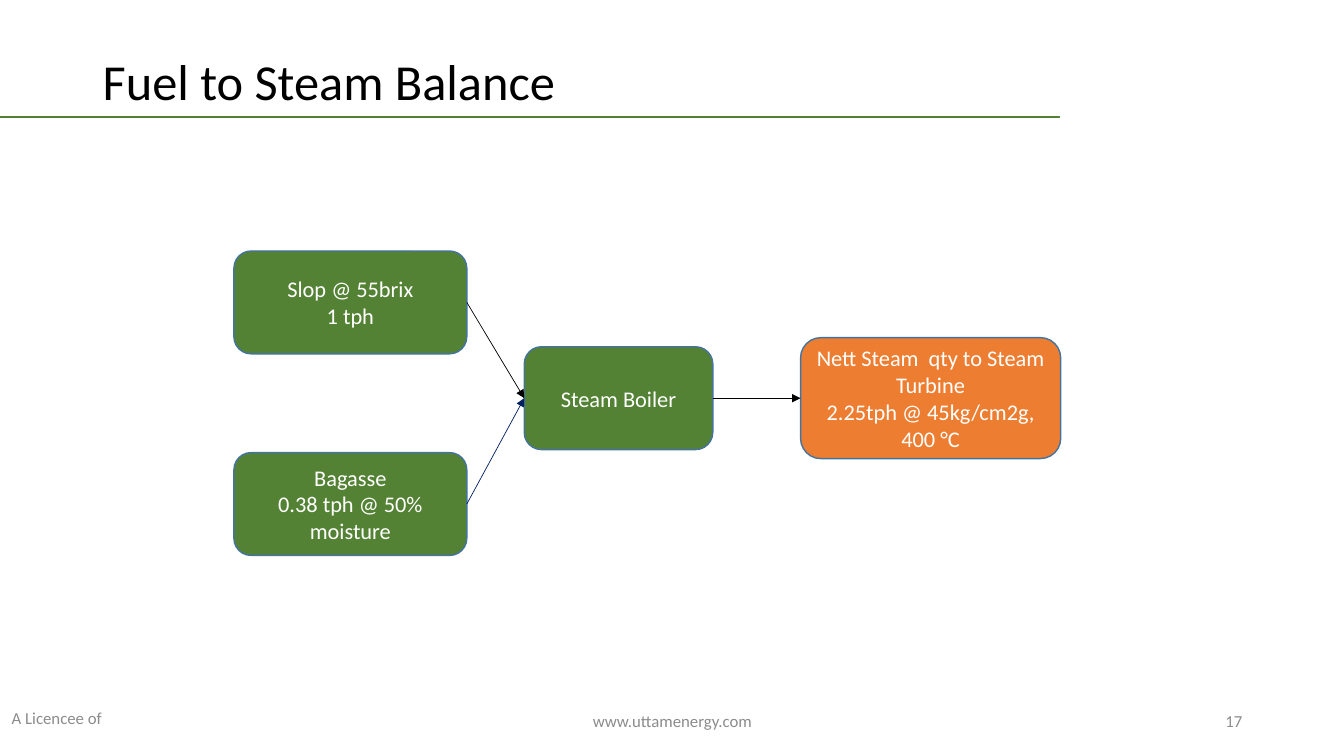
from lxml import etree
from pptx import Presentation
from pptx.dml.color import RGBColor
from pptx.enum import shapes, text
from pptx.oxml import ns
from pptx.util import Inches, Pt

COLORS = {
    "green": "548235",
    "orange": "ED7D31",
    "outline": "43739E",
    "rule": "70AD47",
    "rule_edge": "538035",
    "black": "000000",
    "navy": "002060",
    "white": "FFFFFF",
    "grey": "8C8C8C",
}
FONT = "Calibri"
LEFT_SITE, RIGHT_SITE = 1, 3


def color(name):
    return RGBColor.from_string(COLORS[name])


def write(shape, lines, size, color_name, align):
    """Fill a shape with one paragraph per line, centred vertically."""
    frame = shape.text_frame
    frame.word_wrap = True
    frame.vertical_anchor = text.MSO_ANCHOR.MIDDLE
    frame.text = "\n".join(lines)
    for paragraph in frame.paragraphs:
        paragraph.alignment = align
        for run in paragraph.runs:
            run.font.name = FONT
            run.font.size = Pt(size)
            run.font.color.rgb = color(color_name)


def add_box(slide, kind, box, fill, line, width):
    shape = slide.shapes.add_shape(kind, *map(Inches, box))
    shape.shadow.inherit = False
    shape.fill.solid()
    shape.fill.fore_color.rgb = color(fill)
    shape.line.color.rgb = color(line)
    shape.line.width = Pt(width)
    return shape


def add_label(slide, box, words, size, color_name, align):
    label = slide.shapes.add_textbox(*map(Inches, box))
    write(label, [words], size, color_name, align)
    return label


def add_step(slide, box, lines, fill="green"):
    step = add_box(slide, shapes.MSO_SHAPE.ROUNDED_RECTANGLE, box, fill, "outline", 1)
    write(step, lines, 16, "white", text.PP_ALIGN.CENTER)
    return step


def add_arrow(slide, source, target, color_name="black"):
    """Join the right side of one step to the left side of the next."""
    arrow = slide.shapes.add_connector(shapes.MSO_CONNECTOR.STRAIGHT, 0, 0, 0, 0)
    arrow.begin_connect(source, RIGHT_SITE)
    arrow.end_connect(target, LEFT_SITE)
    arrow.line.color.rgb = color(color_name)
    arrow.line.width = Pt(0.5)
    etree.SubElement(arrow.line._get_or_add_ln(), ns.qn("a:tailEnd"), type="triangle")
    etree.SubElement(arrow._element.spPr, ns.qn("a:effectLst"))


def add_header(slide, left, top, width, height):
    add_box(slide, shapes.MSO_SHAPE.RECTANGLE, (-0.03, top + 0.76, 10.54, 0.01),
            "rule", "rule_edge", 0.75)
    title = add_label(slide, (left, top, width, height), "Fuel to Steam Balance",
                      36, "black", text.PP_ALIGN.LEFT)
    title.text_frame.paragraphs[0].line_spacing = 0.9


def add_flow(slide, left, top):
    """Two fuels feed the boiler, which feeds the turbine."""
    fuel_width, height, fuel_pitch = 2.31, 1.02, 2
    slop, bagasse = (
        add_step(slide, (left, top + row * fuel_pitch, fuel_width, height), lines)
        for row, lines in enumerate([
            ["Slop @ 55brix", "1 tph"],
            ["Bagasse", "0.38 tph @ 50% moisture"],
        ])
    )
    boiler = add_step(slide, (left + 2.88, top + 0.95, 1.87, height), ["Steam Boiler"])
    turbine = add_step(slide, (left + 5.62, top + 0.86, 2.58, 1.2),
                       ["Nett Steam  qty to Steam Turbine", "2.25tph @ 45kg/cm2g, 400 °C"],
                       "orange")
    add_arrow(slide, slop, boiler)
    add_arrow(slide, boiler, turbine)
    add_arrow(slide, bagasse, boiler, "navy")


def add_footer(slide, top, height):
    align = text.PP_ALIGN
    for box, words, side in [
        ((0, top - 0.01, 1.11, 0.36), "A Licencee of", align.RIGHT),
        ((4.42, top, 4.5, height), "www.uttamenergy.com", align.CENTER),
        ((9.42, top, 3, height), "17", align.RIGHT),
    ]:
        add_label(slide, box, words, 12, "grey", side)


def main():
    presentation = Presentation()
    presentation.slide_width = Inches(13.33)
    presentation.slide_height = Inches(7.5)
    slide = presentation.slides.add_slide(presentation.slide_layouts[6])
    add_header(slide, 0.92, 0.4, 11.5, 0.87)
    add_flow(slide, 2.32, 2.49)
    add_footer(slide, 6.95, 0.4)
    presentation.save("out.pptx")


if __name__ == "__main__":
    main()
